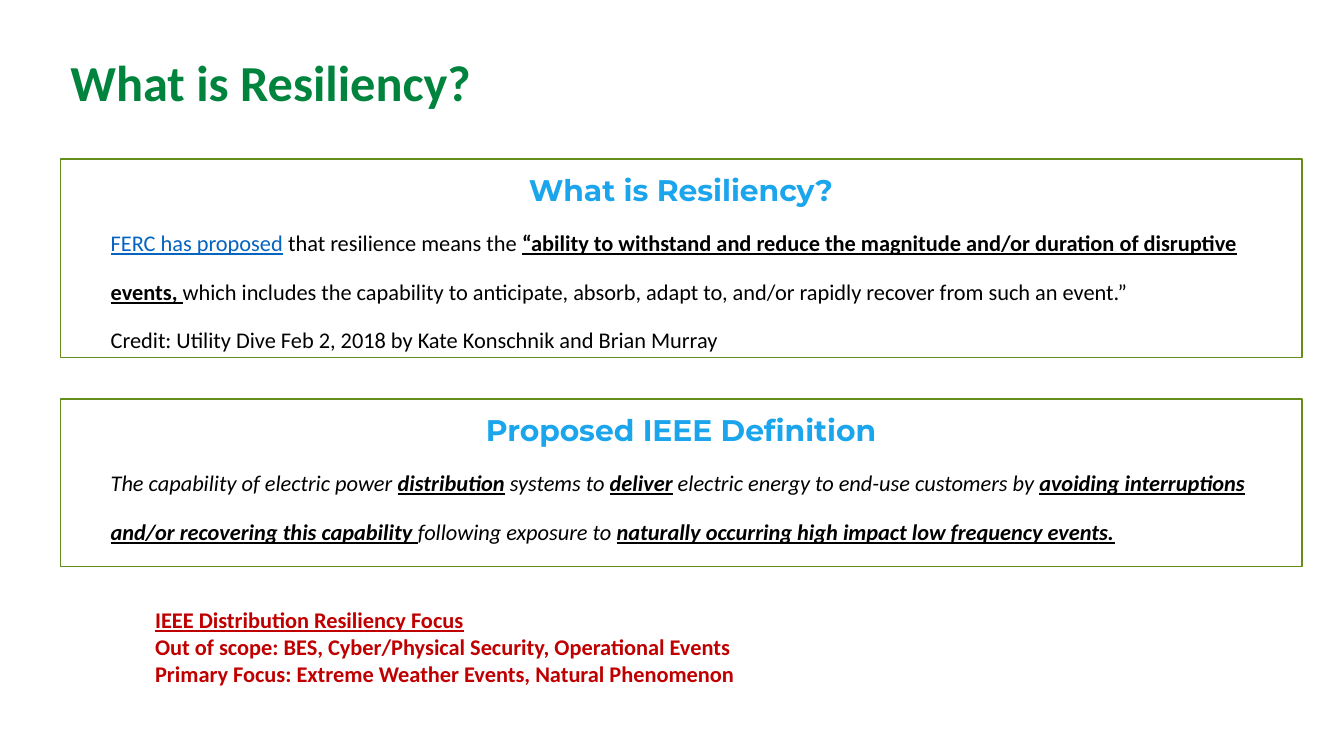
from dataclasses import dataclass

from pptx import Presentation
from pptx.dml.color import RGBColor
from pptx.enum.shapes import MSO_SHAPE
from pptx.enum.text import MSO_ANCHOR, MSO_AUTO_SIZE, PP_ALIGN
from pptx.slide import Slide
from pptx.util import Cm, Pt

RECTANGLE = MSO_SHAPE.RECTANGLE
TOP, MIDDLE = MSO_ANCHOR.TOP, MSO_ANCHOR.MIDDLE
LEFT, CENTER = PP_ALIGN.LEFT, PP_ALIGN.CENTER
GROW = MSO_AUTO_SIZE.SHAPE_TO_FIT_TEXT
TITLE_ONLY = 5


@dataclass(frozen=True)
class Theme:
    body_font: str = "Calibri"
    heading_font: str = "Montserrat"
    title_size: float = 36
    heading_size: float = 21.3
    body_size: float = 16
    line_spacing: float = 34.7
    title: RGBColor = RGBColor(0x00, 0x84, 0x3D)
    heading: RGBColor = RGBColor(0x1B, 0xA5, 0xEC)
    body: RGBColor = RGBColor(0x00, 0x00, 0x00)
    source: RGBColor = RGBColor(0x05, 0x63, 0xC1)
    focus: RGBColor = RGBColor(0xC0, 0x00, 0x00)
    border: RGBColor = RGBColor(0x65, 0x8D, 0x1B)
    panel: RGBColor = RGBColor(0xFF, 0xFF, 0xFF)


THEME = Theme()


@dataclass(frozen=True)
class Phrase:
    text: str
    stressed: bool = False
    is_source: bool = False


@dataclass(frozen=True)
class Definition:
    top: float
    height: float
    heading: str
    statements: list[list[Phrase]]
    italic: bool = False


PANEL_LEFT, PANEL_WIDTH = 1.52, 31.29
STATEMENT_INDENT = 1.27

DEFINITIONS = [
    Definition(4.01, 5.0, "What is Resiliency?", [
        [Phrase("FERC has proposed", is_source=True),
         Phrase(" that resilience means the "),
         Phrase("“ability to withstand and reduce the magnitude and/or duration "
                "of disruptive events, ", stressed=True),
         Phrase("which includes the capability to anticipate, absorb, adapt to, "
                "and/or rapidly recover from such an event.”")],
        [Phrase("Credit: Utility Dive Feb 2, 2018 by Kate Konschnik and Brian Murray")],
    ]),
    Definition(10.06, 4.22, "Proposed IEEE Definition", [
        [Phrase("The capability of electric power "),
         Phrase("distribution", stressed=True),
         Phrase(" systems to "),
         Phrase("deliver", stressed=True),
         Phrase(" electric energy to end-use customers by "),
         Phrase("avoiding interruptions and/or recovering this capability ",
                stressed=True),
         Phrase("following exposure to "),
         Phrase("naturally occurring high impact low frequency events.",
                stressed=True)],
    ], italic=True),
]

FOCUS_LINES = [
    "IEEE Distribution Resiliency Focus",
    "Out of scope: BES, Cyber/Physical Security, Operational Events",
    "Primary Focus: Extreme Weather Events, Natural Phenomenon",
]


def set_font(font, name: str, size: float, color: RGBColor, bold: bool) -> None:
    font.name = name
    font.size = Pt(size)
    font.color.rgb = color
    font.bold = bold


def add_title(slide: Slide, text: str) -> None:
    title = slide.shapes.title
    title.left, title.top = Cm(PANEL_LEFT), Cm(1.12)
    title.width, title.height = Cm(20.96), Cm(1.85)
    title.text_frame.text = text
    title.text_frame.vertical_anchor = MIDDLE
    line = title.text_frame.paragraphs[0]
    line.alignment = LEFT
    set_font(line.font, THEME.body_font, THEME.title_size, THEME.title, True)


def add_statement(frame, phrases: list[Phrase], italic: bool) -> None:
    statement = frame.add_paragraph()
    statement.alignment = LEFT
    statement.line_spacing = Pt(THEME.line_spacing)
    properties = statement._p.get_or_add_pPr()
    properties.set("marL", str(Cm(STATEMENT_INDENT)))
    properties.set("indent", "0")
    set_font(statement.font, THEME.body_font, THEME.body_size, THEME.body, False)
    statement.font.italic = italic
    for phrase in phrases:
        run = statement.add_run()
        run.text = phrase.text
        run.font.color.rgb = THEME.source if phrase.is_source else THEME.body
        if phrase.stressed:
            run.font.bold = True
        if phrase.stressed or phrase.is_source:
            run.font.underline = True


def add_definition(slide: Slide, definition: Definition) -> None:
    panel = slide.shapes.add_shape(
        RECTANGLE, Cm(PANEL_LEFT), Cm(definition.top),
        Cm(PANEL_WIDTH), Cm(definition.height))
    panel.shadow.inherit = False
    panel.fill.solid()
    panel.fill.fore_color.rgb = THEME.panel
    panel.line.color.rgb = THEME.border
    panel.line.width = Pt(1)

    frame = panel.text_frame
    frame.word_wrap = True
    frame.vertical_anchor = TOP
    frame.margin_left = frame.margin_right = 0
    frame.margin_top = frame.margin_bottom = 0
    heading = frame.paragraphs[0]
    heading.text = definition.heading
    heading.alignment = CENTER
    heading.line_spacing = Pt(THEME.line_spacing)
    set_font(heading.font, THEME.heading_font, THEME.heading_size,
             THEME.heading, True)
    for phrases in definition.statements:
        add_statement(frame, phrases, definition.italic)


def add_focus(slide: Slide, lines: list[str]) -> None:
    box = slide.shapes.add_textbox(Cm(3.66), Cm(15.16), Cm(26.87), Cm(2.31))
    frame = box.text_frame
    frame.word_wrap = True
    frame.auto_size = GROW
    frame.text = "\n".join(lines)
    for line in frame.paragraphs:
        set_font(line.font, THEME.body_font, THEME.body_size, THEME.focus, True)
    frame.paragraphs[0].font.underline = True


def main() -> None:
    deck = Presentation()
    deck.slide_width, deck.slide_height = Cm(33.87), Cm(19.05)
    slide = deck.slides.add_slide(deck.slide_layouts[TITLE_ONLY])
    add_title(slide, "What is Resiliency?")
    for definition in DEFINITIONS:
        add_definition(slide, definition)
    add_focus(slide, FOCUS_LINES)
    deck.save("out.pptx")


if __name__ == "__main__":
    main()
